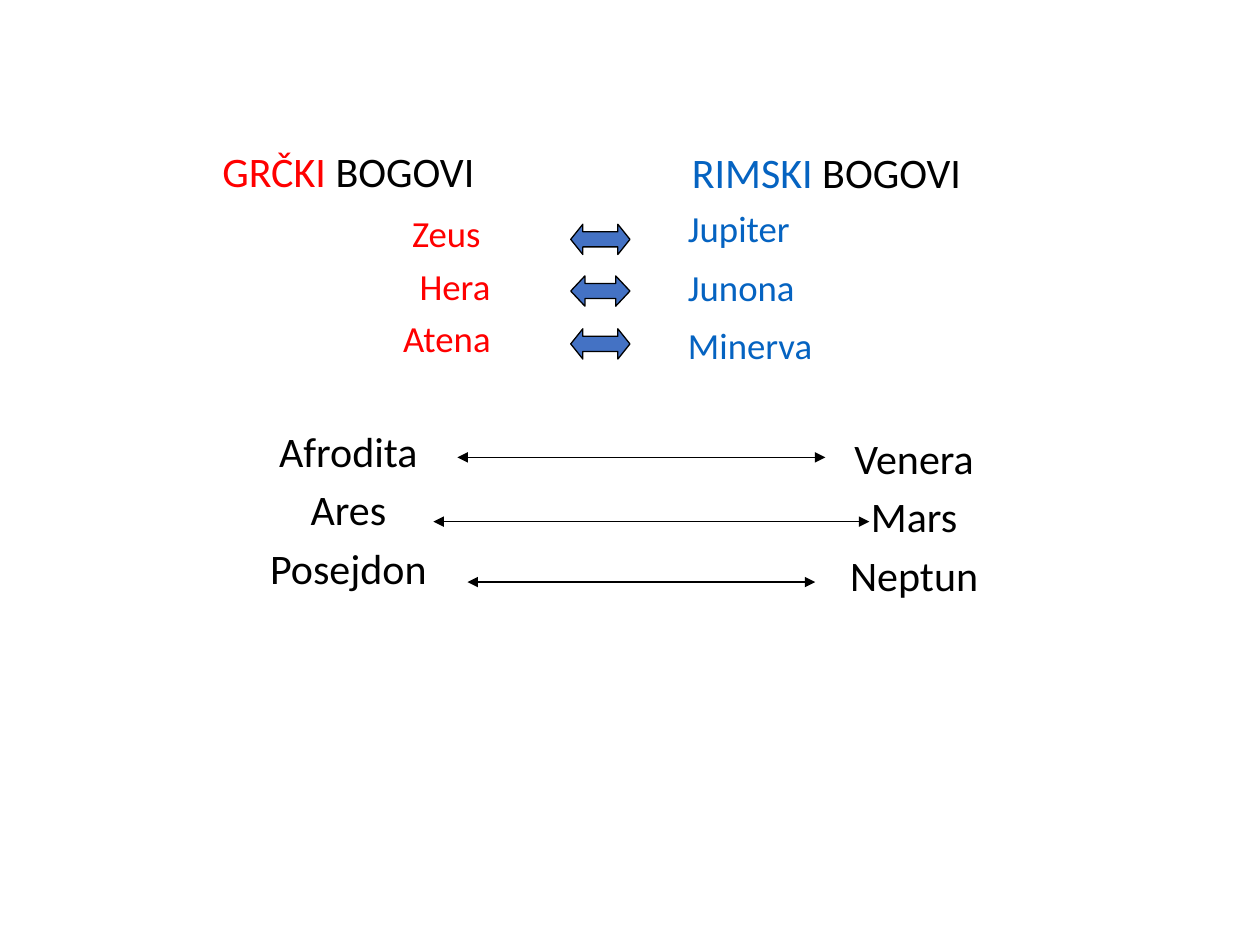
from lxml import etree
from pptx import Presentation
from pptx.dml.color import RGBColor
from pptx.enum import shapes, text
from pptx.oxml.ns import qn
from pptx.util import Inches, Pt

THEME = {
    "font": "Calibri", "large": 24, "small": 21, "line": 0.75,
    "ink": "000000", "greek": "FF0000", "roman": "0563C1", "arrow": "4472C4",
}
GAP, WIDE_GAP, GROUP_GAP = 7.5, 10.8, 40  # points before a paragraph

# Content: (runs of text and colour, size, indent in inches or None to centre, gap)
GREEK = [
    ([("GRČKI", "greek"), (" BOGOVI", "ink")], "large", None, GAP),
    ([("Zeus", "greek")], "small", 2.49, WIDE_GAP),
    ([("Hera", "greek")], "small", 2.55, GAP),
    ([("Atena", "greek")], "small", 2.42, GAP),
    ([("Afrodita", "ink")], "large", None, GROUP_GAP),
    ([("Ares", "ink")], "large", None, GAP),
    ([("Posejdon", "ink")], "large", None, GAP),
]
ROMAN = [
    ([("RIMSKI", "roman"), (" BOGOVI", "ink")], "large", 0.22, GAP),
    ([("Jupiter", "roman")], "small", 0.19, GAP),
    ([("Junona", "roman")], "small", 0.19, WIDE_GAP),
    ([("Minerva", "roman")], "small", 0.19, WIDE_GAP),
    ([("Venera", "ink")], "large", None, GROUP_GAP),
    ([("Mars", "ink")], "large", None, GAP),
    ([("Neptun", "ink")], "large", None, GAP),
]
COLUMNS = [(GREEK, 0.68, 1.15), (ROMAN, 5.17, 1.16)]         # left, top
BLOCK_ARROWS = [(1.78, 0.4), (2.19, 0.47), (2.61, 0.4)]      # top, head length
LINE_ARROWS = [(3.63, 6.55, 3.63), (3.44, 6.9, 4.14), (3.71, 6.47, 4.62)]


def color(name):
    return RGBColor.from_string(THEME[name])


def apply(target, values):
    for name, value in values.items():
        setattr(target, name, value)


def fill_paragraph(para, runs, size, indent, gap):
    centred = indent is None
    apply(para, {
        "alignment": text.PP_ALIGN.CENTER if centred else text.PP_ALIGN.LEFT,
        "line_spacing": 0.9, "space_before": Pt(gap), "space_after": Pt(0),
    })
    props = para._p.get_or_add_pPr()
    props.set("marL", str(Inches(indent or 0)))
    props.set("indent", "0")
    etree.SubElement(props, qn("a:buNone"))
    for words, shade in runs:
        span = para.add_run()
        span.text = words
        apply(span.font, {"name": THEME["font"], "size": Pt(THEME[size])})
        span.font.color.rgb = color(shade)


def style_line(line):
    line.color.rgb = color("ink")
    line.width = Pt(THEME["line"])


deck = Presentation()
deck.slide_width, deck.slide_height = Inches(10), Inches(7.5)
page = deck.slides.add_slide(deck.slide_layouts.get_by_name("Two Content"))
title = page.shapes.title._element
title.getparent().remove(title)

# Two columns of gods
for box, (names, left, top) in zip(list(page.placeholders), COLUMNS):
    apply(box, {"left": Inches(left), "top": Inches(top),
                "width": Inches(4.17), "height": Inches(4.95)})
    frame = box.text_frame
    apply(frame, {"word_wrap": True, "auto_size": text.MSO_AUTO_SIZE.NONE})
    for index, entry in enumerate(names):
        para = frame.add_paragraph() if index else frame.paragraphs[0]
        fill_paragraph(para, *entry)

# Block arrows between the first three pairs
for top, head in BLOCK_ARROWS:
    arrow = page.shapes.add_shape(
        shapes.MSO_SHAPE.LEFT_RIGHT_ARROW,
        Inches(4.53), Inches(top), Inches(0.47), Inches(0.24))
    arrow.adjustments[0], arrow.adjustments[1] = 0.5, head
    arrow.shadow.inherit = False
    arrow.fill.solid()
    arrow.fill.fore_color.rgb = color("arrow")
    style_line(arrow.line)

# Thin double-headed arrows between the last three pairs
for start, end, y in LINE_ARROWS:
    link = page.shapes.add_connector(
        shapes.MSO_CONNECTOR.STRAIGHT,
        Inches(start), Inches(y), Inches(end), Inches(y))
    style_line(link.line)
    for tag in ("a:headEnd", "a:tailEnd"):
        etree.SubElement(link.line._get_or_add_ln(), qn(tag), type="triangle")
    etree.SubElement(link._element.spPr, qn("a:effectLst"))

deck.save("out.pptx")
